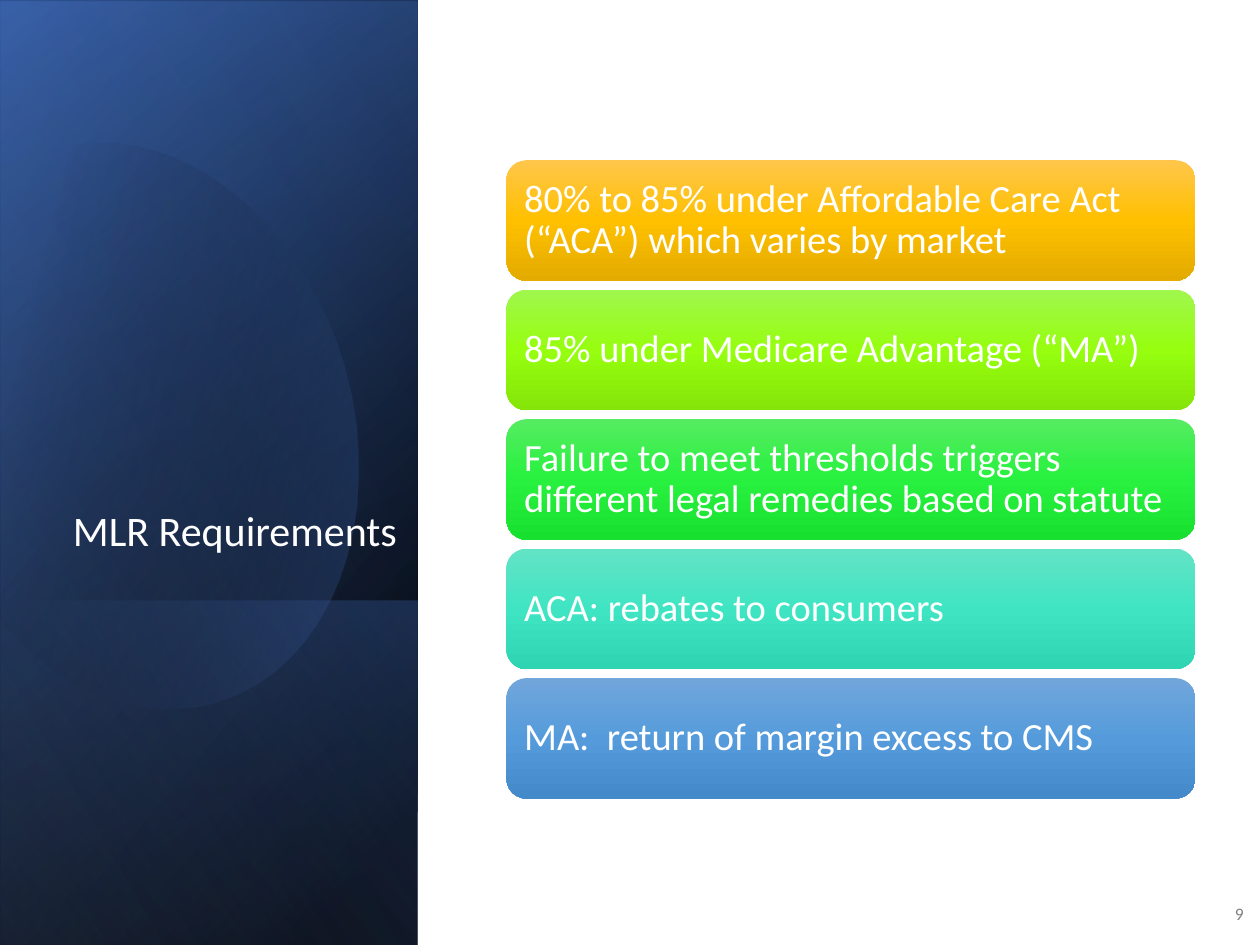
import math
from dataclasses import dataclass

from lxml import etree
from pptx import Presentation
from pptx.dml.color import RGBColor
from pptx.enum.shapes import MSO_SHAPE
from pptx.enum.text import MSO_ANCHOR, MSO_AUTO_SIZE, PP_ALIGN
from pptx.oxml.ns import qn
from pptx.util import Cm, Pt

RECTANGLE, ROUNDED = MSO_SHAPE.RECTANGLE, MSO_SHAPE.ROUNDED_RECTANGLE
MIDDLE, BOTTOM = MSO_ANCHOR.MIDDLE, MSO_ANCHOR.BOTTOM
LEFT, RIGHT = PP_ALIGN.LEFT, PP_ALIGN.RIGHT
NO_AUTOFIT = MSO_AUTO_SIZE.NONE


@dataclass(frozen=True)
class Theme:
    font: str = "Calibri"
    white: str = "FFFFFF"
    gray: str = "808080"
    black: str = "000000"
    blue: str = "4472C4"
    dark_blue: str = "2F5597"
    pale_blue: str = "8FAADC"
    title_size: int = 24
    bar_size: int = 22
    number_size: int = 10


theme = Theme()


def paint_gradient(shape, stops, angle):
    """Fill with (position, colour, opacity) stops in percent; no line or shadow."""
    shape.shadow.inherit = False
    shape.line.fill.background()
    shape.fill.gradient()
    gradient = shape._element.spPr.find(qn("a:gradFill"))
    for child in list(gradient):
        gradient.remove(child)
    gradient.set("rotWithShape", "1")
    stop_list = etree.SubElement(gradient, qn("a:gsLst"))
    for position, color, opacity in stops:
        stop = etree.SubElement(stop_list, qn("a:gs"), pos=str(position * 1000))
        fill = etree.SubElement(stop, qn("a:srgbClr"), val=color)
        if opacity < 100:
            etree.SubElement(fill, qn("a:alpha"), val=str(opacity * 1000))
    etree.SubElement(gradient, qn("a:lin"), ang=str(angle * 60000), scaled="0")


def write_text(shape, text, size, color, alignment, anchor):
    frame = shape.text_frame
    frame.word_wrap = True
    frame.auto_size = NO_AUTOFIT
    frame.vertical_anchor = anchor
    frame.text = text
    paragraph = frame.paragraphs[0]
    paragraph.alignment = alignment
    paragraph.line_spacing = 0.9
    paragraph.font.name = theme.font
    paragraph.font.size = Pt(size)
    paragraph.font.bold = False
    paragraph.font.color.rgb = RGBColor.from_string(color)


presentation = Presentation()
presentation.slide_width, presentation.slide_height = Cm(25.4), Cm(19.05)
slide = presentation.slides.add_slide(presentation.slide_layouts[5])
shapes = slide.shapes

# Left panel: turned, mirrored gradient layers, with the leaf below the last one
full_panel = (-5.31, 5.31, 19.05, 8.41)
panel_layers = [
    (full_panel, [(8, theme.black, 100), (100, theme.dark_blue, 100)], 50),
    ((-5.31, 5.36, 19.05, 8.41), [(0, theme.black, 0), (99, theme.blue, 46)], 30),
    ((0.74, 11.38, 6.96, 8.41), [(2, theme.blue, 29), (100, theme.black, 30)], 130),
    (full_panel, [(0, theme.black, 0), (99, theme.pale_blue, 11)], 120),
]
panels = []
for box, stops, angle in panel_layers:
    panel = shapes.add_shape(RECTANGLE, *map(Cm, box))
    panel.rotation = 90
    panel._element.spPr.find(qn("a:xfrm")).set("flipH", "1")
    paint_gradient(panel, stops, angle)
    panels.append(panel)

# Leaf outline: cubic curves, where a straight edge repeats its end points
leaf_start = (2.44, 2.9)
leaf_curves = [
    ((4.34, 3.1), (6.2, 4.88), (6.93, 7.37)),
    ((7.8, 10.46), (6.65, 13.49), (4.34, 14.15)),
    ((2.9, 14.58), (1.35, 13.97), (0.18, 12.7)),
    ((0.18, 12.7), (-0.08, 12.4), (-0.08, 12.4)),
    ((-0.08, 12.4), (-0.64, 4.22), (-0.64, 4.22)),
    ((-0.64, 4.22), (-0.38, 3.91), (-0.38, 3.91)),
    ((0.05, 3.48), (0.56, 3.18), (1.14, 3.0)),
    ((1.57, 2.87), (2.01, 2.84), (2.44, 2.9)),
]
outline = [leaf_start]
for curve in leaf_curves:
    controls = (outline[-1], *curve)
    for step in range(1, 17):
        t = step / 16
        weights = ((1 - t) ** 3, 3 * t * (1 - t) ** 2, 3 * t * t * (1 - t), t ** 3)
        outline.append(tuple(sum(w * point[axis] for w, point in zip(weights, controls))
                             for axis in (0, 1)))

# The outline is drawn upright and then turned about its centre
leaf_turn = 343.9
center_x, center_y = 3.02, 8.5
cosine, sine = math.cos(math.radians(-leaf_turn)), math.sin(math.radians(-leaf_turn))
upright = [(Cm(center_x + (x - center_x) * cosine - (y - center_y) * sine),
            Cm(center_y + (x - center_x) * sine + (y - center_y) * cosine))
           for x, y in outline]
builder = shapes.build_freeform(*upright[0])
builder.add_line_segments(upright[1:], close=True)
leaf = builder.convert_to_shape()
leaf.rotation = leaf_turn
paint_gradient(leaf, [(29, theme.black, 0), (100, theme.blue, 43)], 30)
panels[-1]._element.addprevious(leaf._element)

# Title, in front of the panel
title = shapes.title
title.left, title.top, title.width, title.height = Cm(0.66), Cm(4.67), Cm(7.6), Cm(6.66)
write_text(title, "MLR Requirements", theme.title_size, theme.white, RIGHT, BOTTOM)
panels[-1]._element.addnext(title._element)

# Page number
number = shapes.add_textbox(Cm(24.38), Cm(17.93), Cm(0.94), Cm(1.02))
write_text(number, "9", theme.number_size, theme.gray, RIGHT, MIDDLE)

# Requirement bars
bars = [
    ("80% to 85% under Affordable Care Act (“ACA”) which varies by market",
     ("FFC64B", "FFC000", "E3AB00")),
    ("85% under Medicare Advantage (“MA”)", ("A0F74E", "96FE0E", "85E509")),
    ("Failure to meet thresholds triggers different legal remedies based on statute",
     ("56EC62", "27F13E", "18E02F")),
    ("ACA: rebates to consumers", ("63E3C6", "3FE5C3", "2FD4B2")),
    ("MA:  return of margin excess to CMS", ("71A6DB", "559BDB", "448ACA")),
]
bar_top, bar_pitch = 3.23, 2.61
bar_group = shapes.add_group_shape()
for index, (text, colors) in enumerate(bars):
    bar = bar_group.shapes.add_shape(
        ROUNDED, Cm(10.21), Cm(bar_top + index * bar_pitch), Cm(13.89), Cm(2.43))
    paint_gradient(bar, [(50 * i, color, 100) for i, color in enumerate(colors)], 90)
    write_text(bar, text, theme.bar_size, theme.white, LEFT, MIDDLE)
    # The rounded corners already inset the text a little
    bar.text_frame.margin_left = bar.text_frame.margin_right = Cm(0.24)

presentation.save("out.pptx")
